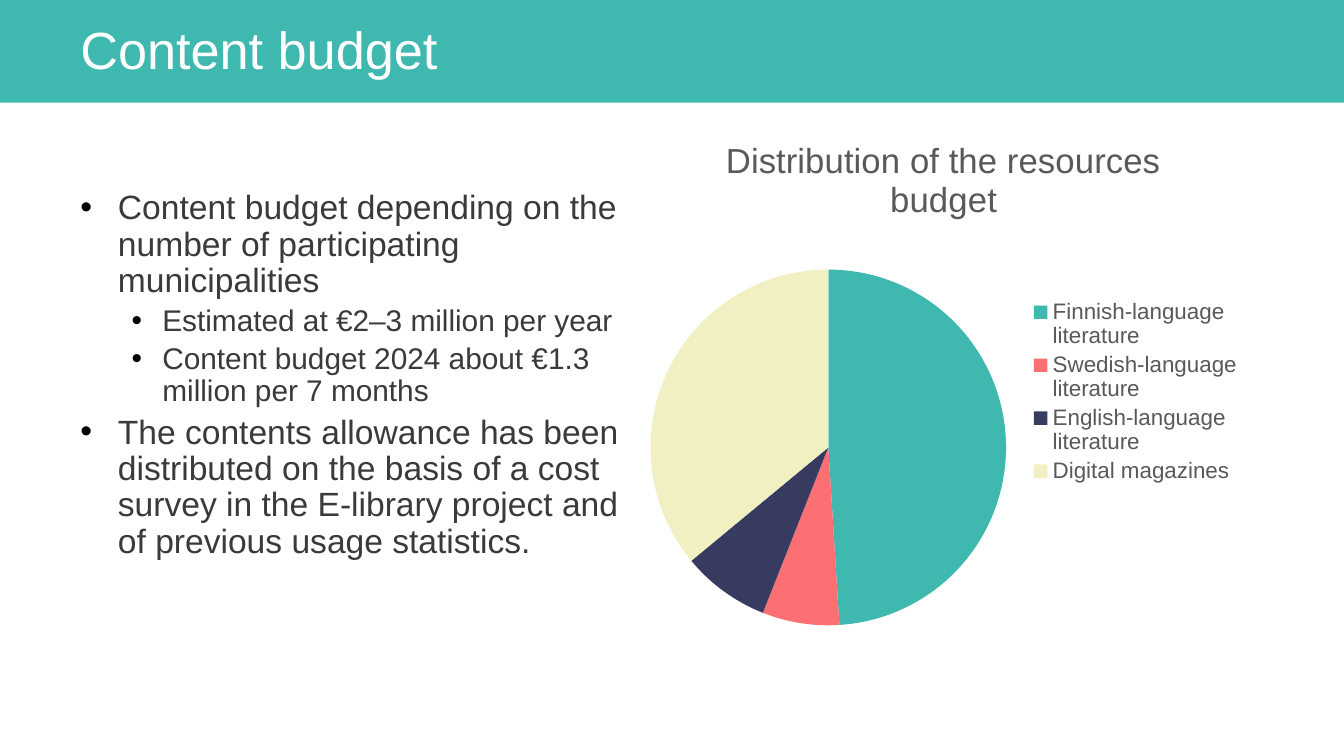
"""Build the content budget slide with its bullet list and pie chart."""
from typing import NamedTuple

from lxml import etree
from pptx import Presentation
from pptx import util as u
from pptx.chart.data import CategoryChartData
from pptx.dml.color import RGBColor
from pptx.enum import chart as ce
from pptx.enum import shapes, text
from pptx.oxml import ns

FACE = "Arial"
TEAL = "3FB8AF"
GREY = "595959"


class Box(NamedTuple):
    left: float
    top: float
    width: float
    height: float

    def lens(self) -> list:
        return [u.Cm(side) for side in self]


class Level(NamedTuple):
    size: int
    left: float
    hang: float


class Item(NamedTuple):
    level: Level
    words: str


class Slice(NamedTuple):
    name: str
    share: int
    color: str


MAIN = Level(18, 0.71, 0.71)
SUB = Level(16, 1.55, 0.58)

ITEMS = [
    Item(MAIN, "Content budget depending on the number of participating municipalities"),
    Item(SUB, "Estimated at €2–3 million per year"),
    Item(SUB, "Content budget 2024 about €1.3 million per 7 months"),
    Item(MAIN, "The contents allowance has been distributed on the basis of a cost "
               "survey in the E-library project and of previous usage statistics."),
]

SLICES = [
    Slice("Finnish-language literature", 49, TEAL),
    Slice("Swedish-language literature", 7, "FC7074"),
    Slice("English-language literature", 8, "373B5F"),
    Slice("Digital magazines", 36, "F1F0C2"),
]


def tint(target, color: str) -> None:
    target.rgb = RGBColor.from_string(color)


def paint(fill, color: str) -> None:
    fill.solid()
    tint(fill.fore_color, color)


def style(font, size: float, color: str) -> None:
    font.name, font.size, font.bold = FACE, u.Pt(size), False
    tint(font.color, color)


def write(para, words: str, size: float, color: str) -> None:
    run = para.add_run()
    run.text = words
    style(run.font, size, color)


def frame(slide, box: Box, anchor):
    body = slide.shapes.add_textbox(*box.lens()).text_frame
    body.word_wrap = True
    body.vertical_anchor = anchor
    return body


def bullet(para, level: Level) -> None:
    props = para._p.get_or_add_pPr()
    props.set("marL", str(u.Cm(level.left)))
    props.set("indent", str(-u.Cm(level.hang)))
    color = etree.SubElement(props, ns.qn("a:buClr"))
    etree.SubElement(color, ns.qn("a:srgbClr"), val="000000")
    etree.SubElement(props, ns.qn("a:buFont"), typeface=FACE)
    etree.SubElement(props, ns.qn("a:buChar"), char="•")


def header(slide) -> None:
    bar = slide.shapes.add_shape(shapes.MSO_SHAPE.RECTANGLE, *Box(0, 0, 25.4, 1.94).lens())
    bar.shadow.inherit = False
    paint(bar.fill, TEAL)
    bar.line.fill.background()
    para = frame(slide, Box(1.27, 0.36, 17.63, 1.27), text.MSO_ANCHOR.MIDDLE).paragraphs[0]
    para.line_spacing = 0.9
    write(para, "Content budget", 28, "FFFFFF")


def listing(slide, items: list[Item]) -> None:
    body = frame(slide, Box(1.27, 3.48, 11.23, 8.13), text.MSO_ANCHOR.TOP)
    for num, item in enumerate(items):
        para = body.add_paragraph() if num else body.paragraphs[0]
        bullet(para, item.level)
        para.level = int(item.level is SUB)
        para.line_spacing = 0.9
        if num:
            para.space_before = u.Pt(item.level.size * 0.2)
        write(para, item.words, item.level.size, "3A3A3A")


def place(chart, box: Box) -> None:
    area = chart._chartSpace.chart.plotArea
    for old in area.findall(ns.qn("c:layout")):
        area.remove(old)
    layout = etree.Element(ns.qn("c:layout"))
    area.insert(0, layout)
    manual = etree.SubElement(layout, ns.qn("c:manualLayout"))
    pairs = [("layoutTarget", "inner"), ("xMode", "edge"), ("yMode", "edge"),
             *zip("xywh", box)]
    for tag, val in pairs:
        etree.SubElement(manual, ns.qn(f"c:{tag}"), val=str(val))


def pie(slide, slices: list[Slice]) -> None:
    data = CategoryChartData()
    data.categories = [part.name for part in slices]
    data.add_series("Series 1", [part.share for part in slices])
    box = Box(11.94, 2.13, 11.79, 10.54)
    chart = slide.shapes.add_chart(ce.XL_CHART_TYPE.PIE, *box.lens(), data).chart
    style(chart.font, 10, "000000")
    chart.has_title = True
    title = chart.chart_title
    title.include_in_layout = False
    write(title.text_frame.paragraphs[0], "Distribution of the resources budget", 18.6, GREY)
    chart.has_legend = True
    chart.legend.position = ce.XL_LEGEND_POSITION.RIGHT
    chart.legend.include_in_layout = False
    style(chart.legend.font, 12, GREY)
    plot = chart.plots[0]
    plot.vary_by_categories = True
    for num, part in enumerate(slices):
        paint(plot.series[0].points[num].format.fill, part.color)
    place(chart, Box(0.03, 0.28, 0.57, 0.64))


def main() -> None:
    deck = Presentation()
    deck.slide_width, deck.slide_height = u.Cm(25.4), u.Cm(14.28)
    slide = deck.slides.add_slide(deck.slide_layouts[6])
    header(slide)
    listing(slide, ITEMS)
    pie(slide, SLICES)
    deck.save("out.pptx")


if __name__ == "__main__":
    main()
